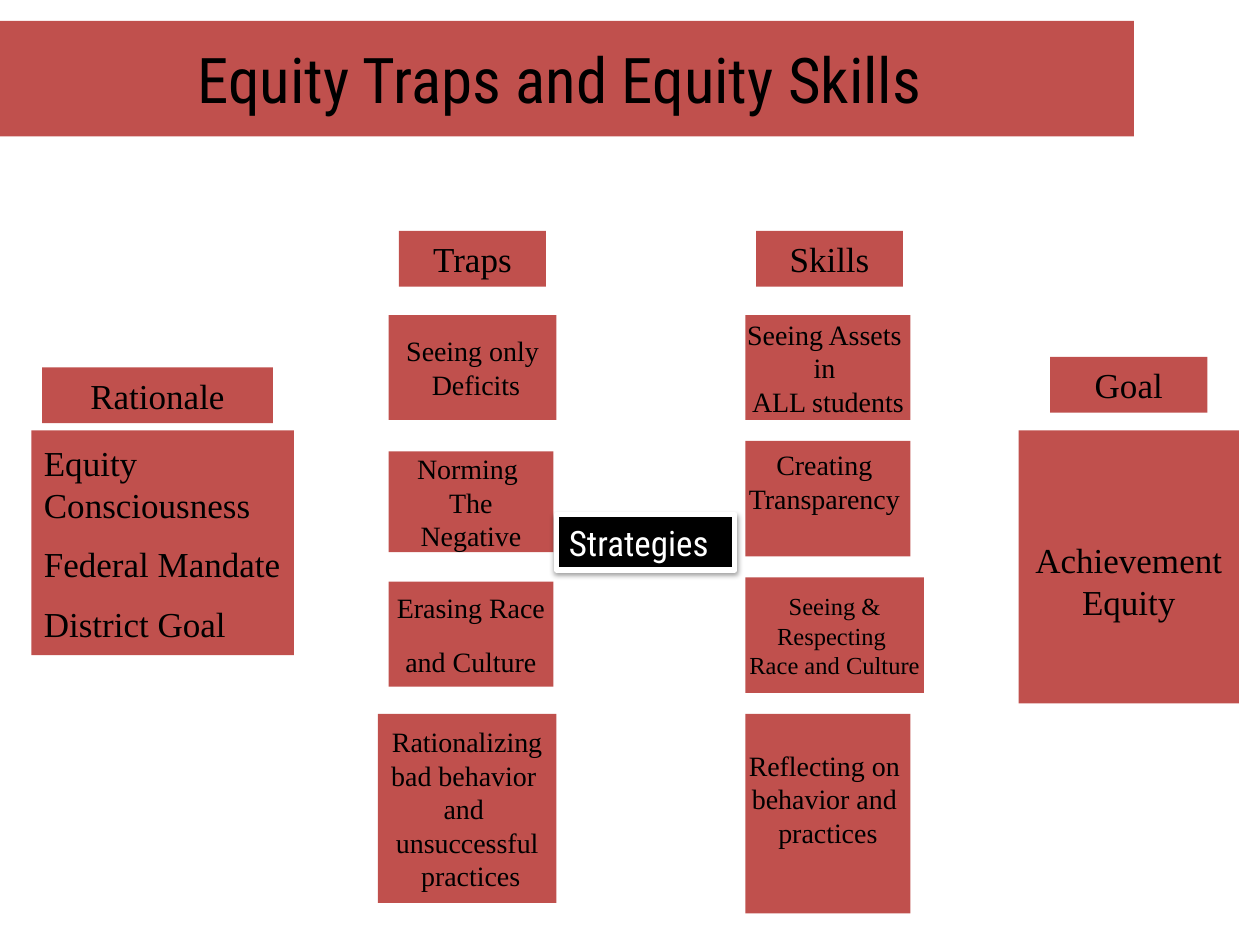
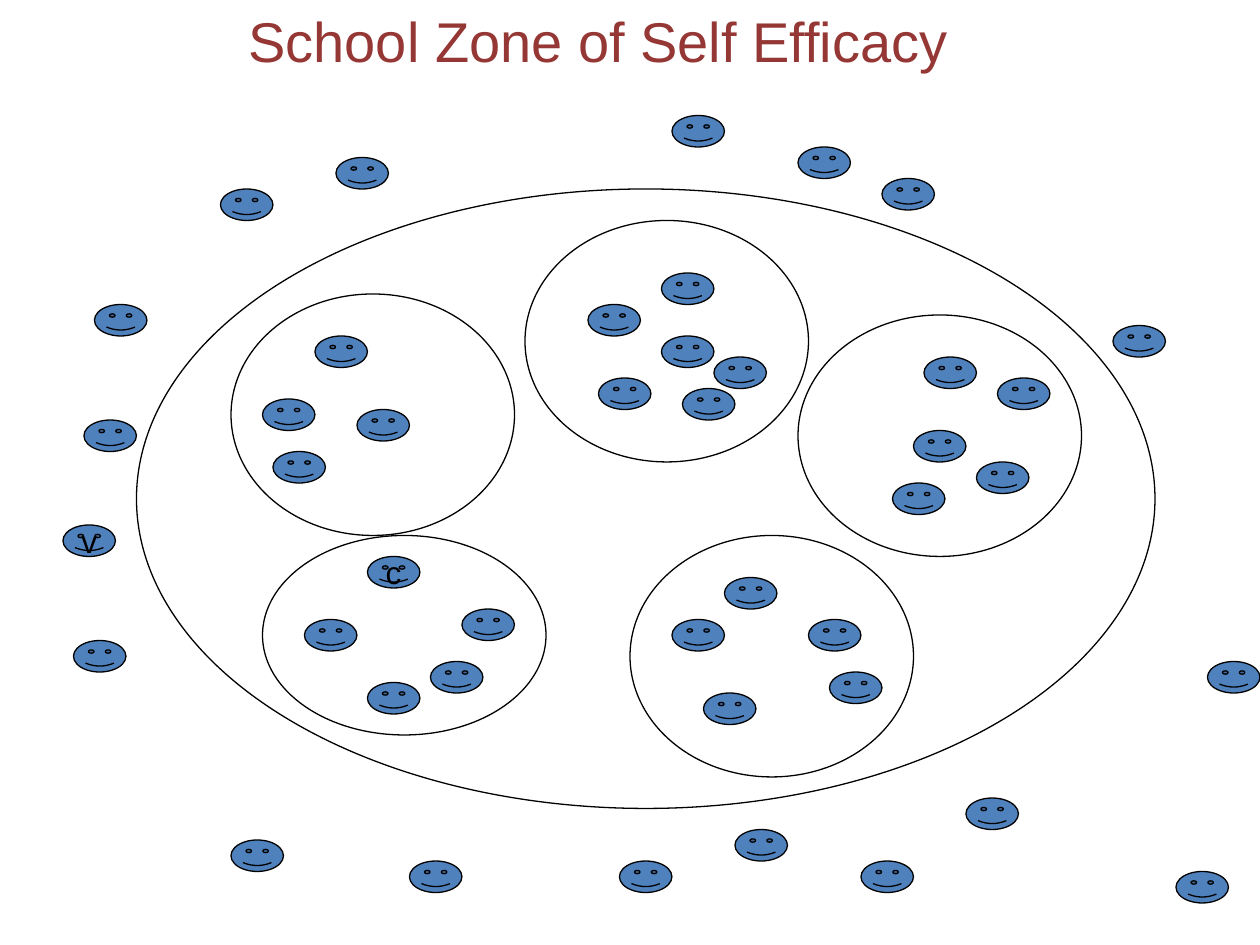
"""Build two slides: equity traps against skills, and a school's zone of self efficacy."""
from dataclasses import dataclass
from pptx import Presentation
from pptx import util as u
from pptx.dml.color import RGBColor
from pptx.enum import shapes, text
from pptx.oxml import parse_xml
from pptx.oxml.ns import nsdecls


@dataclass(frozen=True)
class Theme:
    red: str = "C0504D"
    blue: str = "4F81BD"
    wine: str = "953735"
    ink: str = "000000"
    paper: str = "FFFFFF"
    serif: str = "Times New Roman"
    sans: str = "Arial"
    slim: str = "Roboto Condensed"
    title: int = 36
    sub: int = 32
    head: int = 20
    face: int = 18
    item: int = 16
    small: int = 14


T = Theme()
KIND = shapes.MSO_SHAPE
MID, TOP = text.MSO_ANCHOR.MIDDLE, text.MSO_ANCHOR.TOP
LEFT, MIDST = text.PP_ALIGN.LEFT, text.PP_ALIGN.CENTER

deck = Presentation()
deck.slide_width, deck.slide_height = u.Inches(10), u.Inches(7.5)
CELL = deck.slide_width / 120
SIDES = ("left", "top", "width", "height")


def put(slide, kind, box, fill=None, line=None, weight=0.75):
    """Place a preset shape, or the title if kind is None, on the grid."""
    if kind is None:
        shape = slide.shapes.title
        for side, size in zip(SIDES, box):
            setattr(shape, side, round(size * CELL))
    else:
        shape = slide.shapes.add_shape(kind, *(round(size * CELL) for size in box))
        shape.shadow.inherit = False
    if fill:
        shape.fill.solid()
        shape.fill.fore_color.rgb = RGBColor.from_string(fill)
    else:
        shape.fill.background()
    if line:
        shape.line.color.rgb = RGBColor.from_string(line)
        shape.line.width = u.Pt(weight)
    else:
        shape.line.fill.background()
    return shape


def write(shape, words, size, font=T.serif, color=T.ink, align=MIDST, gap=0, **frame):
    """Fill a shape with one paragraph a line."""
    body = shape.text_frame
    body.text = words
    look = {"auto_size": text.MSO_AUTO_SIZE.NONE, "vertical_anchor": MID,
            "word_wrap": False, **frame}
    for key, value in look.items():
        setattr(body, key, value)
    for index, para in enumerate(body.paragraphs):
        para.alignment = align
        para.space_before = u.Pt(gap if index else 0)
        for key, value in {"size": u.Pt(size), "name": font}.items():
            setattr(para.font, key, value)
        para.font.color.rgb = RGBColor.from_string(color)


chart, zone = (deck.slides.add_slide(deck.slide_layouts[5]) for _ in range(2))

band = put(chart, None, (0, 2, 108, 11), T.red)
write(band, "Equity Traps and Equity Skills ", T.title, T.slim, word_wrap=True)

HEAD = 5.3
heads = [
    ("Rationale", 4, 35, 22),
    ("Traps", 38, 22, 14),
    ("Skills", 72, 22, 14),
    ("Goal", 100, 34, 15),
]
for words, col, row, wide in heads:
    write(put(chart, KIND.RECTANGLE, (col, row, wide, HEAD), T.red), words, T.head)

cards = [
    ("Equity Consciousness\nFederal Mandate\nDistrict Goal", (3, 41, 25, 21.4), T.head,
     {"align": LEFT, "gap": 10, "word_wrap": True}),
    ("Achievement\nEquity", (97, 41, 21, 26), T.head, {"margin_top": u.Inches(0.26)}),
    ("Seeing only\n Deficits", (37, 30, 16, 10), T.item, {}),
    ("Norming \nThe\nNegative", (37, 43, 15.7, 9.6), T.item, {}),
    ("Erasing Race\nand Culture", (37, 55.4, 15.7, 10), T.item, {"gap": 12}),
    ("Rationalizing\nbad behavior \nand \nunsuccessful\n practices",
     (36, 68, 17, 18), T.item, {}),
    ("Seeing Assets \nin \nALL students", (71, 30, 15.7, 10), T.item, {}),
    ("Creating \nTransparency ", (71, 42, 15.7, 11), T.item,
     {"margin_bottom": u.Inches(0.33)}),
    ("Seeing &\nRespecting \nRace and Culture", (71, 55, 17, 11), T.small, {}),
    ("Reflecting on \nbehavior and \npractices", (71, 68, 15.7, 19), T.item,
     {"margin_bottom": u.Inches(0.29)}),
]
for words, box, size, style in cards:
    write(put(chart, KIND.RECTANGLE, box, T.red), words, size, **style)

plan = put(chart, KIND.RECTANGLE, (53, 49, 17, HEAD), T.ink, T.paper, 3)
write(plan, "Strategies", T.head, T.slim, T.paper, LEFT)
glow = plan.shadow
glow.inherit = True
plan.fill._xPr.append(parse_xml(
    f'<a:effectLst {nsdecls("a")}><a:outerShdw blurRad="40000" dist="20000" '
    f'dir="5400000" rotWithShape="0"><a:srgbClr val="{T.ink}">'
    '<a:alpha val="38000"/></a:srgbClr></a:outerShdw></a:effectLst>'))

name = put(zone, None, (22, 0, 70, 7.7))
write(name, "School Zone of Self Efficacy", T.sub, T.sans, T.wine, vertical_anchor=TOP)

rings = {
    (13, 18, 97, 59): [],
    (50, 21, 27, 23): [(56, 29), (63, 26), (63, 32), (68, 34), (57, 36), (65, 37)],
    (22, 28, 27, 23): [(30, 32), (25, 38), (34, 39), (26, 43)],
    (76, 30, 27, 23): [(88, 34), (95, 36), (87, 41), (93, 44), (85, 46)],
    (25, 51, 27, 19): [(35, 53), (44, 58), (29, 59), (41, 63), (35, 65)],
    (60, 51, 27, 23): [(69, 55), (64, 59), (77, 59), (79, 64), (67, 66)],
}
outer = [(64, 11), (76, 14), (32, 15), (84, 17), (21, 18), (9, 29), (106, 31),
         (8, 40), (6, 50), (7, 61), (115, 63), (92, 76), (70, 79), (22, 80),
         (39, 82), (59, 82), (82, 82), (112, 83)]
marks = {(35, 53): "c", (6, 50): "v"}

for ring in rings:
    put(zone, KIND.OVAL, ring, None, T.ink)
for spot in sum(rings.values(), outer):
    face = put(zone, KIND.SMILEY_FACE, (*spot, 5, 3), T.blue, T.ink)
    if spot in marks:
        write(face, marks[spot], T.face, T.sans)

deck.save("out.pptx")
